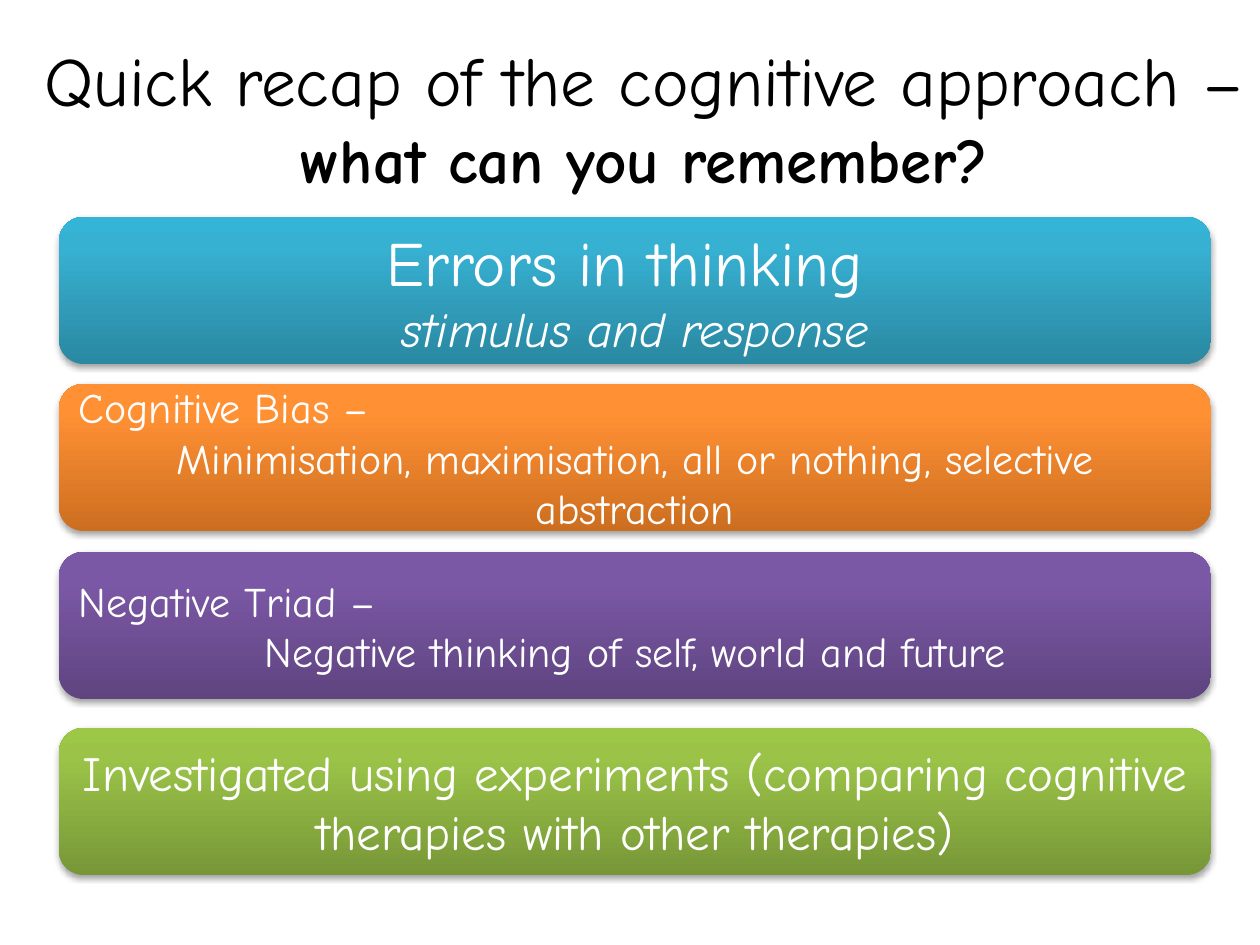
from copy import deepcopy

from lxml import etree
from pptx import Presentation
from pptx.dml.color import RGBColor
from pptx.enum.shapes import MSO_SHAPE
from pptx.enum.text import MSO_ANCHOR, PP_ALIGN
from pptx.oxml import parse_xml
from pptx.oxml.ns import qn
from pptx.util import Emu, Pt

ROUND = MSO_SHAPE.ROUNDED_RECTANGLE
MIDDLE = MSO_ANCHOR.MIDDLE
LEFT, CENTER = PP_ALIGN.LEFT, PP_ALIGN.CENTER
SCALE = 914400 / 126

THEME = {
    "font": "Comic Neue",
    "ink": "000000",
    "light": "FFFFFF",
    "title": 39.6,
    "large": 36,
    "medium": 28,
    "small": 24,
    "blue": ("2A88A2", "37B1D2", "34B4D6"),
    "orange": ("CC6E20", "FF9034", "FF9136"),
    "purple": ("5F4480", "7B58A6", "7C57A8"),
    "green": ("779737", "9BC348", "9DC746"),
}
STOPS = (0, 0.8, 1)
SHADOW = (
    '<a:outerShdw xmlns:a="http://schemas.openxmlformats.org/drawingml/2006/main"'
    ' blurRad="40000" dist="23000" dir="5400000" rotWithShape="0">'
    '<a:srgbClr val="000000"><a:alpha val="35000"/></a:srgbClr></a:outerShdw>'
)


def px(*sizes):
    return [Emu(round(size * SCALE)) for size in sizes]


def write(shape, color, lines):
    """Fill a shape with lines of (alignment, runs of (text, size, style))."""
    frame = shape.text_frame
    frame.word_wrap = True
    frame.vertical_anchor = MIDDLE
    for i, (align, runs) in enumerate(lines):
        para = frame.paragraphs[0] if i == 0 else frame.add_paragraph()
        para.alignment = align
        for text, size, style in runs:
            run = para.add_run()
            run.text = text
            font = run.font
            font.name = THEME["font"]
            font.size = Pt(THEME[size])
            font.bold = style == "bold"
            font.italic = style == "italic"
            font.color.rgb = RGBColor.from_string(THEME[color])


deck = Presentation()
deck.slide_width, deck.slide_height = px(1260, 945)
slide = deck.slides.add_slide(deck.slide_layouts[6])

title = slide.shapes.add_textbox(*px(29, 38, 1231, 157))
write(title, "ink", [(CENTER, [
    ("Quick recap of the cognitive approach – ", "title", ""),
    ("what can you remember?", "large", "bold"),
])])

BANDS = [
    (217, "blue", [
        (CENTER, [("Errors in thinking ", "large", "")]),
        (CENTER, [("stimulus and response", "medium", "italic")]),
    ]),
    (384, "orange", [
        (LEFT, [("Cognitive Bias –", "small", "")]),
        (CENTER, [("Minimisation, maximisation, all or nothing, "
                   "selective abstraction", "small", "")]),
    ]),
    (552, "purple", [
        (LEFT, [("Negative Triad –", "small", "")]),
        (CENTER, [("Negative thinking of self, world and future", "small", "")]),
    ]),
    (728, "green", [
        (CENTER, [("Investigated using experiments (comparing cognitive "
                   "therapies with other therapies)", "medium", "")]),
    ]),
]
for top, hue, lines in BANDS:
    band = slide.shapes.add_shape(ROUND, *px(59, top, 1152, 147))
    band.line.fill.background()
    band.fill.gradient()
    band.fill.gradient_angle = 90
    props = band.element.spPr
    stops = props.find(".//" + qn("a:gsLst"))
    stops.append(deepcopy(stops[-1]))
    for stop, place, color in zip(band.fill.gradient_stops, STOPS, THEME[hue]):
        stop.position = place
        stop.color.rgb = RGBColor.from_string(color)
    band.shadow.inherit = False
    etree.ElementBase.append(props.find(qn("a:effectLst")), parse_xml(SHADOW))
    write(band, "light", lines)

deck.save("out.pptx")
